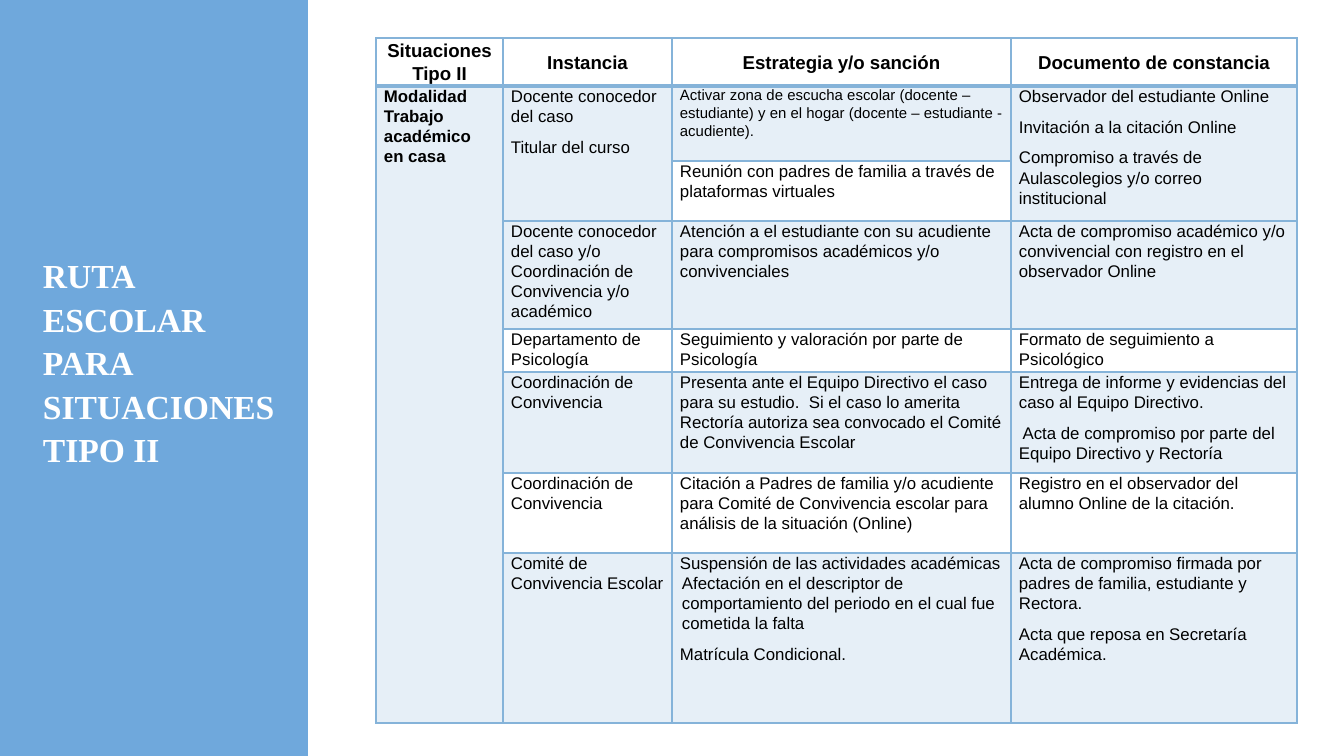
from lxml import etree
from pptx import Presentation
from pptx.dml.color import RGBColor
from pptx.enum.shapes import MSO_SHAPE as Shape
from pptx.enum.text import MSO_ANCHOR as Anchor, PP_ALIGN as Align
from pptx.oxml.ns import qn
from pptx.util import Emu, Pt

BLUE = RGBColor(0x6F, 0xA8, 0xDC)
BORDER = RGBColor(0x85, 0xB3, 0xD9)
WHITE = RGBColor(0xFF, 0xFF, 0xFF)
BLACK = RGBColor(0x00, 0x00, 0x00)

COLUMNS = [127, 169, 339, 286]
ROWS = [44, 75, 60, 101, 40, 101, 80, 170]
HEADERS = ["Situaciones Tipo II", "Instancia", "Estrategia y/o sanción",
           "Documento de constancia"]
MODALITY = ["Modalidad Trabajo académico en casa"]

# Each row: instance, strategy, document; None is covered by a merged cell
BODY = [
    (["Docente conocedor del caso", "Titular del curso"],
     ["Activar zona de escucha escolar (docente – estudiante) y en el hogar "
      "(docente – estudiante - acudiente)."],
     ["Observador del estudiante Online", "Invitación a la citación Online",
      "Compromiso a través de Aulascolegios y/o correo institucional"]),
    (None,
     ["Reunión con padres de familia a través de plataformas virtuales"],
     None),
    (["Docente conocedor del caso y/o Coordinación de Convivencia y/o académico"],
     ["Atención a el estudiante con su acudiente para compromisos académicos "
      "y/o convivenciales"],
     ["Acta de compromiso académico y/o convivencial con registro en el "
      "observador Online"]),
    (["Departamento de Psicología"],
     ["Seguimiento y valoración por parte de Psicología"],
     ["Formato de seguimiento a Psicológico"]),
    (["Coordinación de Convivencia"],
     ["Presenta ante el Equipo Directivo el caso para su estudio.  Si el caso lo "
      "amerita Rectoría autoriza sea convocado el Comité de Convivencia Escolar"],
     ["Entrega de informe y evidencias del caso al Equipo Directivo.",
      " Acta de compromiso por parte del Equipo Directivo y Rectoría"]),
    (["Coordinación de Convivencia"],
     ["Citación a Padres de familia y/o acudiente para Comité de Convivencia "
      "escolar para análisis de la situación (Online)"],
     ["Registro en el observador del alumno Online de la citación."]),
    (["Comité de Convivencia Escolar"],
     ["Suspensión de las actividades académicas Afectación en el descriptor de "
      "comportamiento del periodo en el cual fue cometida la falta",
      "Matrícula Condicional."],
     ["Acta de compromiso firmada por padres de familia, estudiante y Rectora.",
      "Acta que reposa en Secretaría Académica."]),
]
PLAIN_ROWS = {0, 2, 4, 6}


def px(value):
    return Emu(round(value * 9144000 / 1344))


def apply(target, values):
    for name, value in values.items():
        setattr(target, name, value)


class RouteSlide:
    TITLE = {"name": "Times New Roman", "size": Pt(18), "bold": True}
    HEADER = {"name": "Arial", "size": Pt(10), "bold": True}
    CELL = {"name": "Arial", "size": Pt(9), "bold": False}
    CELL_FRAME = {"margin_left": px(8), "margin_right": px(8),
                  "margin_top": 0, "margin_bottom": 0}

    def __init__(self, presentation):
        self.slide = presentation.slides.add_slide(presentation.slide_layouts[6])

    def background(self, color):
        fill = self.slide.background.fill
        fill.solid()
        fill.fore_color.rgb = color

    def panel(self, left, top, width, height, color):
        shape = self.slide.shapes.add_shape(
            Shape.RECTANGLE, px(left), px(top), px(width), px(height))
        shape.shadow.inherit = False
        shape.fill.solid()
        shape.fill.fore_color.rgb = color
        shape.line.fill.background()

    def paragraphs(self, frame, texts, font, color, layout):
        for index, text in enumerate(texts):
            paragraph = frame.add_paragraph() if index else frame.paragraphs[0]
            apply(paragraph, layout)
            run = paragraph.add_run()
            run.text = text
            apply(run.font, font)
            run.font.color.rgb = color

    def title(self, left, top, width, height, text):
        frame = self.slide.shapes.add_textbox(
            px(left), px(top), px(width), px(height)).text_frame
        apply(frame, {"word_wrap": True, "margin_left": px(13), "margin_right": px(13),
                      "margin_top": px(13), "margin_bottom": px(13)})
        self.paragraphs(frame, [text], self.TITLE, WHITE,
                        {"alignment": Align.JUSTIFY, "line_spacing": 1.08})

    def table(self, left, top, columns, rows):
        table = self.slide.shapes.add_table(
            len(rows), len(columns), px(left), px(top),
            px(sum(columns)), px(sum(rows))).table
        apply(table, {"first_row": False, "horz_banding": False})
        for column, width in zip(table.columns, columns):
            column.width = px(width)
        for row, height in zip(table.rows, rows):
            row.height = px(height)
        return table

    def borders(self, cell, row):
        widths = {"L": 1, "R": 1, "T": 2 if row == 1 else 1, "B": 2 if row == 0 else 1}
        properties = cell._tc.get_or_add_tcPr()
        for side, width in widths.items():
            line = etree.SubElement(properties, qn(f"a:ln{side}"), w=str(Pt(width)))
            fill = etree.SubElement(line, qn("a:solidFill"))
            etree.SubElement(fill, qn("a:srgbClr"), val=str(BORDER))

    def tint(self, cell, shaded):
        if not shaded:
            cell.fill.background()
            return
        cell.fill.solid()
        cell.fill.fore_color.rgb = BORDER
        color = cell._tc.tcPr.find(qn("a:solidFill")).find(qn("a:srgbClr"))
        etree.SubElement(color, qn("a:alpha"), val="20000")

    def cell(self, cell, texts, font=None, align=Align.LEFT, anchor=Anchor.TOP):
        apply(cell, {**self.CELL_FRAME, "vertical_anchor": anchor})
        self.paragraphs(cell.text_frame, texts, {**self.CELL, **(font or {})}, BLACK,
                        {"alignment": align, "line_spacing": 1.07, "space_after": Pt(5.7)})


def main():
    presentation = Presentation()
    apply(presentation, {"slide_width": px(1344), "slide_height": px(756)})
    page = RouteSlide(presentation)

    # Blue side band with the title, white content area
    page.background(BLUE)
    page.panel(308, 0, 1036, 756, WHITE)
    page.title(30, 239, 271, 277, "RUTA ESCOLAR PARA SITUACIONES TIPO II")

    # Table frame: borders, fills and merged cells
    table = page.table(376, 38, COLUMNS, ROWS)
    for row in range(len(ROWS)):
        for column in range(len(COLUMNS)):
            cell = table.cell(row, column)
            page.borders(cell, row)
            page.tint(cell, row not in PLAIN_ROWS)
    table.cell(1, 0).merge(table.cell(len(ROWS) - 1, 0))
    for column in (1, 3):
        table.cell(1, column).merge(table.cell(2, column))

    # Header row and modality column
    for column, text in enumerate(HEADERS):
        page.cell(table.cell(0, column), [text], page.HEADER, Align.CENTER, Anchor.MIDDLE)
    page.cell(table.cell(1, 0), MODALITY, {"bold": True}, Align.JUSTIFY)

    # Body rows; the first strategy is set smaller
    for row, entries in enumerate(BODY, 1):
        for column, texts in enumerate(entries, 1):
            if texts:
                font = {"size": Pt(8)} if (row, column) == (1, 2) else None
                page.cell(table.cell(row, column), texts, font)

    # Hanging indent of the last strategy
    for paragraph in table.cell(len(ROWS) - 1, 2).text_frame.paragraphs:
        properties = paragraph._p.get_or_add_pPr()
        properties.set("marL", str(px(2)))
        properties.set("indent", str(-px(2)))

    presentation.save("out.pptx")


if __name__ == "__main__":
    main()
